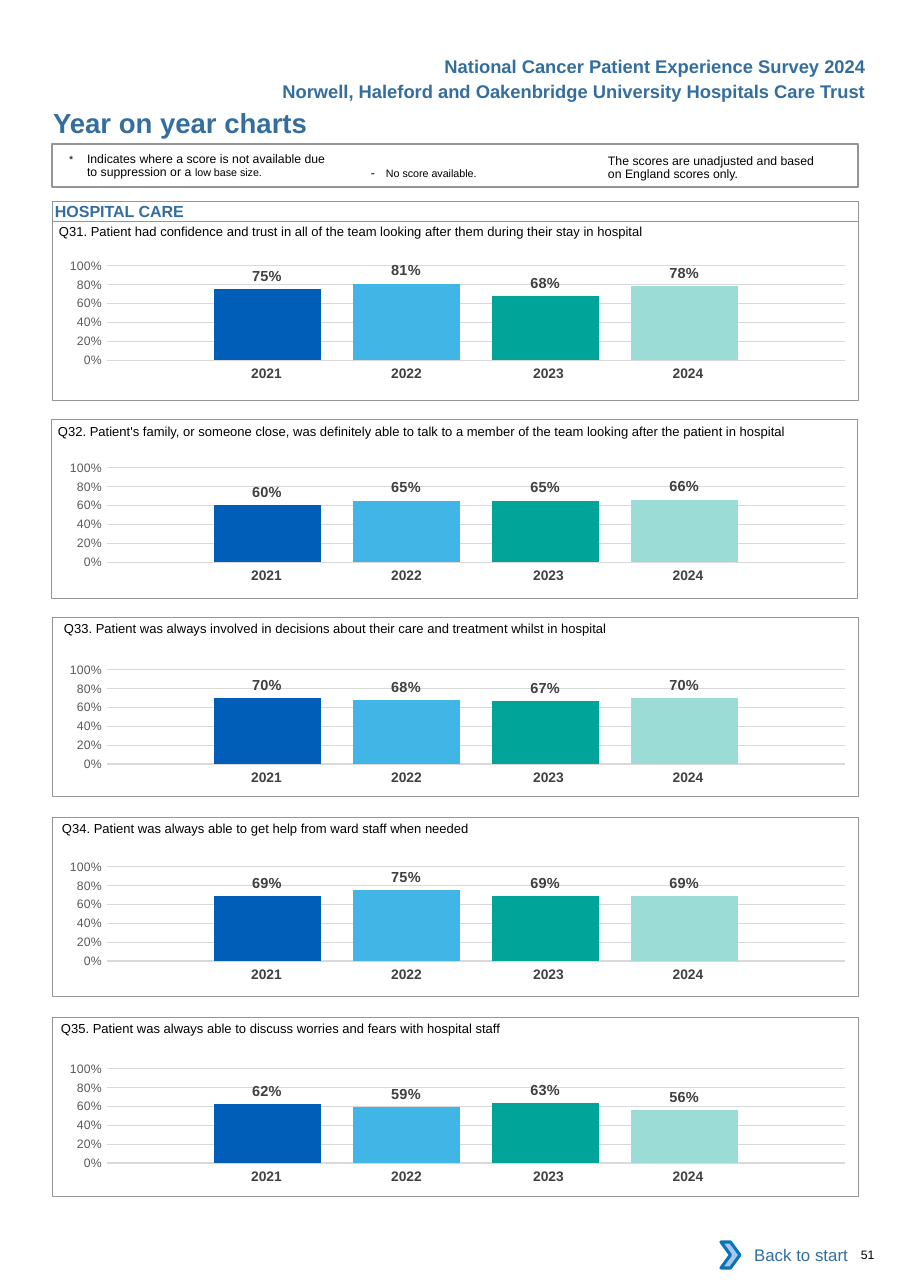
from lxml.etree import SubElement
from pptx import Presentation
from pptx.chart.data import CategoryChartData
from pptx.dml.color import RGBColor
from pptx.enum.chart import XL_CHART_TYPE, XL_LABEL_POSITION, XL_TICK_MARK
from pptx.enum.shapes import MSO_SHAPE
from pptx.enum.text import MSO_ANCHOR, MSO_AUTO_SIZE, PP_ALIGN
from pptx.oxml.ns import qn
from pptx.util import Pt

PX = 8300
COLORS = {
    "heading": "336E9F", "text": "000000", "year": "414042", "label": "404040",
    "axis": "595959", "grid": "D9D9D9", "frame": "939598", "white": "FFFFFF",
    "chevron": "A8C7E9", "chevron_line": "0A74BB",
}
YEARS = {"2021": "005EB8", "2022": "41B6E6", "2023": "00A499", "2024": "9CDCD7"}
YEAR_WIDTHS = [140, 140, 148, 140]
YEAR_RIGHT_MARGINS = [0, 0, 4, 13]
PLOT = {"x": 0.08, "y": 0.145, "w": 0.915, "h": 0.666}
NO_GRID_STYLE = "{2D5ABB26-0587-4C30-8999-92F81FD0307C}"
PANEL_SIZE = (806, 179)

# panel left, panel top, chart top, question left, question middle, question, scores
QUESTIONS = [
    (52, 221, 245, 59, 231, "Q31. Patient had confidence and trust in all of the team looking after "
     "them during their stay in hospital", (0.75, 0.81, 0.68, 0.78)),
    (51, 419, 447, 58, 431, "Q32. Patient's family, or someone close, was definitely able to talk to "
     "a member of the team looking after the patient in hospital", (0.60, 0.65, 0.65, 0.66)),
    (52, 617, 649, 64, 628, "Q33. Patient was always involved in decisions about their care and "
     "treatment whilst in hospital", (0.70, 0.68, 0.67, 0.70)),
    (52, 817, 846, 62, 828, "Q34. Patient was always able to get help from ward staff when needed",
     (0.69, 0.75, 0.69, 0.69)),
    (52, 1017, 1048, 61, 1028, "Q35. Patient was always able to discuss worries and fears with "
     "hospital staff", (0.62, 0.59, 0.63, 0.56)),
]


def color(name):
    """Return the RGB colour for a name or a hex string."""
    return RGBColor.from_string(COLORS.get(name, name))


def place(*lengths):
    """Turn px lengths into EMU."""
    return [length * PX for length in lengths]


def style_font(font, size, tone="text", bold=False):
    """Apply the page's typeface with a size, colour and weight."""
    font.name, font.size, font.bold = "Arial", Pt(size), bold
    font.color.rgb = color(tone)


def write(box, spans, tone="text", bold=False, align=PP_ALIGN.LEFT, anchor=MSO_ANCHOR.MIDDLE):
    """Fill a shape with one paragraph made of (text, size) spans."""
    frame = box.text_frame
    frame.word_wrap, frame.auto_size = True, MSO_AUTO_SIZE.NONE
    frame.vertical_anchor = anchor
    frame.margin_left = frame.margin_right = frame.margin_top = frame.margin_bottom = 0
    para = frame.paragraphs[0]
    para.alignment = align
    style_font(para.font, spans[0][1], tone, bold)
    for text, size in spans:
        span = para.add_run()
        span.text = text
        style_font(span.font, size, tone, bold)
    return para


def add_text(page, area, spans, **options):
    """Add a text box at a px area."""
    return write(page.shapes.add_textbox(*place(*area)), spans, **options)


def add_note(page, area, spans, hang=0):
    """Add a legend note with tight lines and a hanging indent."""
    para = add_text(page, area, spans, anchor=MSO_ANCHOR.TOP)
    para.line_spacing = Pt(8.1)
    properties = para._p.get_or_add_pPr()
    properties.set("marL", str(hang * PX))
    properties.set("indent", str(-hang * PX))


def add_block(page, kind, area, line, width, fill=None):
    """Add a preset shape with an optional fill and outline."""
    block = page.shapes.add_shape(kind, *place(*area))
    block.shadow.inherit = False
    if fill:
        block.fill.solid()
        block.fill.fore_color.rgb = color(fill)
    else:
        block.fill.background()
    if line:
        block.line.color.rgb, block.line.width = color(line), Pt(width)
    else:
        block.line.fill.background()
    return block


def add_years(page, top):
    """Add the row of year names under a chart."""
    frame = page.shapes.add_table(1, len(YEARS), *place(191, top, sum(YEAR_WIDTHS), 30))
    table = frame.table
    table.first_row = table.horz_banding = False
    next(frame._element.iter(qn("a:tableStyleId"))).text = NO_GRID_STYLE
    for index, year in enumerate(YEARS):
        table.columns[index].width = YEAR_WIDTHS[index] * PX
        cell = table.cell(0, index)
        cell.fill.background()
        cell.margin_left, cell.margin_right = place(11, YEAR_RIGHT_MARGINS[index])
        cell.margin_top = cell.margin_bottom = 5 * PX
        para = cell.text_frame.paragraphs[0]
        para.alignment = PP_ALIGN.CENTER
        span = para.add_run()
        span.text = year
        for font in (para.font, span.font):
            style_font(font, 9, "year", True)


def fix_plot(chart):
    """Set the inner plot area as fractions of the chart."""
    area = chart._chartSpace.chart.plotArea
    for old in area.findall(qn("c:layout")):
        area.remove(old)
    layout = SubElement(area, qn("c:layout"))
    area.insert(0, layout)
    manual = SubElement(layout, qn("c:manualLayout"))
    settings = {"layoutTarget": "inner", "xMode": "edge", "yMode": "edge", **PLOT}
    for tag, value in settings.items():
        SubElement(manual, qn(f"c:{tag}")).set("val", str(value))


def add_scores(page, top, scores):
    """Add a column chart with one series for each year."""
    data = CategoryChartData(number_format="0%")
    data.categories = ["1"]
    for index, score in enumerate(scores, 1):
        data.add_series(f"Series {index}", [score])
    chart = page.shapes.add_chart(
        XL_CHART_TYPE.COLUMN_CLUSTERED, *place(42, top, 807, 142), data).chart
    chart.has_legend = chart.has_title = False
    chart.font.name, chart.font.size = "Calibri", Pt(10)
    chart.font.color.rgb = color("text")
    chart.category_axis.visible = False
    axis = chart.value_axis
    axis.minimum_scale, axis.maximum_scale, axis.major_unit = 0, 1, 0.2
    axis.major_tick_mark = axis.minor_tick_mark = XL_TICK_MARK.NONE
    axis.format.line.fill.background()
    axis.major_gridlines.format.line.color.rgb = color("grid")
    axis.major_gridlines.format.line.width = Pt(0.75)
    axis.tick_labels.number_format = "0%"
    axis.tick_labels.number_format_is_linked = False
    style_font(axis.tick_labels.font, 8, "axis")
    plot = chart.plots[0]
    plot.gap_width, plot.overlap, plot.vary_by_categories = 200, -30, False
    for series, tone in zip(plot.series, YEARS.values()):
        series.format.fill.solid()
        series.format.fill.fore_color.rgb = color(tone)
        labels = series.data_labels
        labels.show_value, labels.position = True, XL_LABEL_POSITION.OUTSIDE_END
        labels.number_format, labels.number_format_is_linked = "0%", False
        style_font(labels.font, 9.5, "label", True)
    fix_plot(chart)


def add_question(page, left, top, chart_top, text_left, middle, question, scores):
    """Add a framed question with its chart and years."""
    add_years(page, chart_top + 116)
    add_scores(page, chart_top, scores)
    add_block(page, MSO_SHAPE.RECTANGLE, (left, top, *PANEL_SIZE), "frame", 0.5)
    add_text(page, (text_left, middle - 10, 790, 20), [(question, 8.5)])


def add_legend(page):
    """Add the framed notes on how to read the scores."""
    add_block(page, MSO_SHAPE.RECTANGLE, (52, 144, 806, 43), "frame", 0.75)
    add_note(page, (69, 154, 262, 28), [
        ("*\t", 7), ("Indicates where a score is not available due to suppression or a ", 8),
        ("low base size.", 7)], hang=18)
    add_note(page, (371, 168, 150, 16), [("-\t", 8), ("No score available.", 7)], hang=15)
    add_note(page, (608, 156, 215, 28),
             [("The scores are unadjusted and based on England scores only.", 8)])


def main():
    """Build the page of year on year charts."""
    deck = Presentation()
    deck.slide_width, deck.slide_height = place(910, 1288)
    page = deck.slides.add_slide(deck.slide_layouts[5])
    title = page.shapes.title
    title.left, title.top, title.width, title.height = place(53, 106, 496, 33)
    write(title, [("Year on year charts", 18)], tone="heading", bold=True)
    headings = ["National Cancer Patient Experience Survey 2024",
                "Norwell, Haleford and Oakenbridge University Hospitals Care Trust"]
    for index, heading in enumerate(headings):
        add_text(page, (266, 54 + 25 * index, 600, 24), [(heading, 12)],
                 tone="heading", bold=True, align=PP_ALIGN.RIGHT)
    add_legend(page)
    section = add_block(page, MSO_SHAPE.RECTANGLE, (52, 201, 806, 20), "frame", 0.5)
    para = write(section, [("HOSPITAL CARE", 10.5)], tone="heading", bold=True)
    para._p.get_or_add_pPr().set("marL", str(3 * PX))
    for question in QUESTIONS:
        add_question(page, *question)
    back = add_block(page, MSO_SHAPE.RECTANGLE, (730, 1232, 118, 46), None, 0, "white")
    write(back, [("Back to start", 11)], tone="heading", align=PP_ALIGN.RIGHT)
    add_block(page, MSO_SHAPE.CHEVRON, (721, 1242, 19, 26), "chevron_line", 2, "chevron")
    add_text(page, (861, 1247, 40, 16), [("51", 8)])
    deck.save("out.pptx")


if __name__ == "__main__":
    main()
